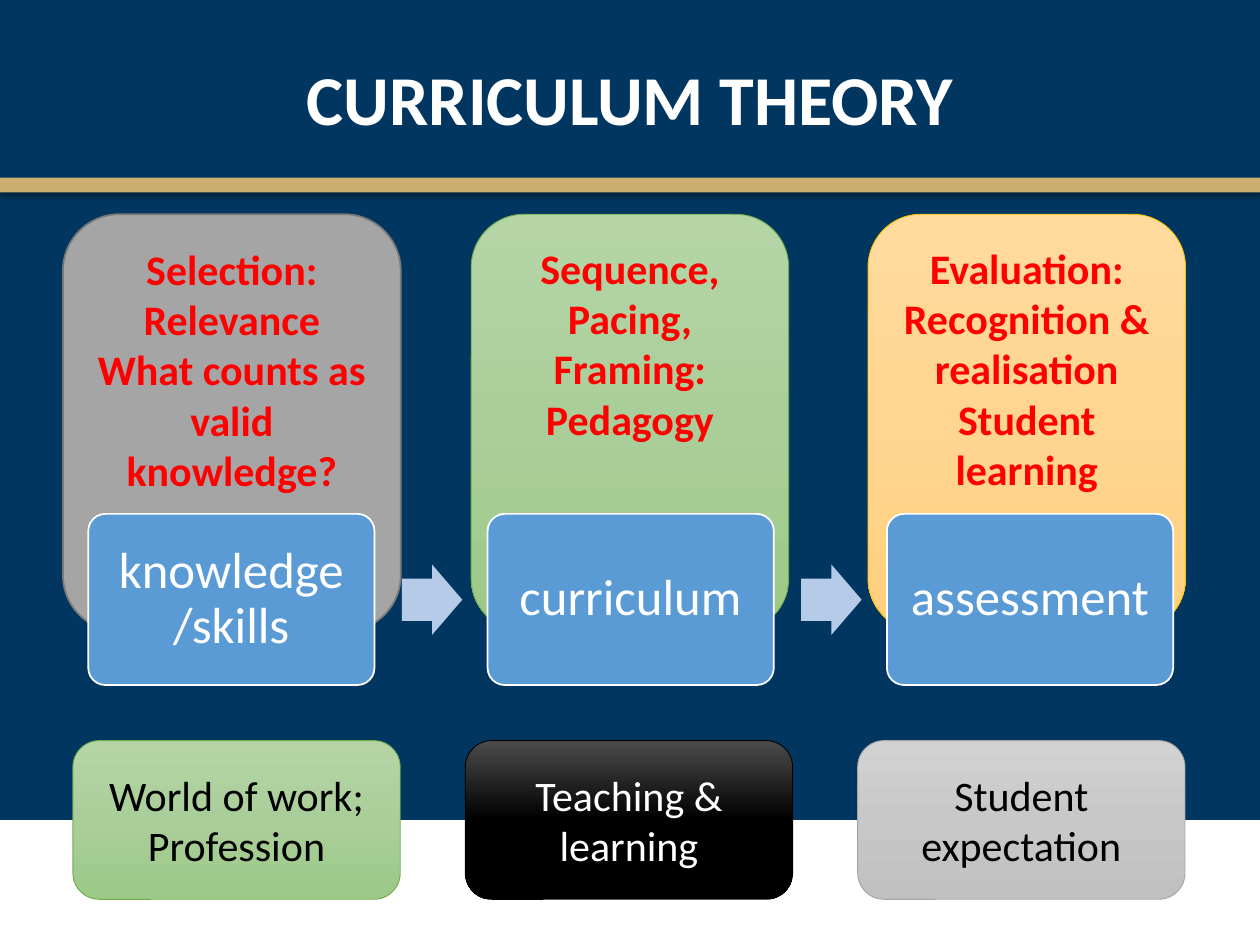
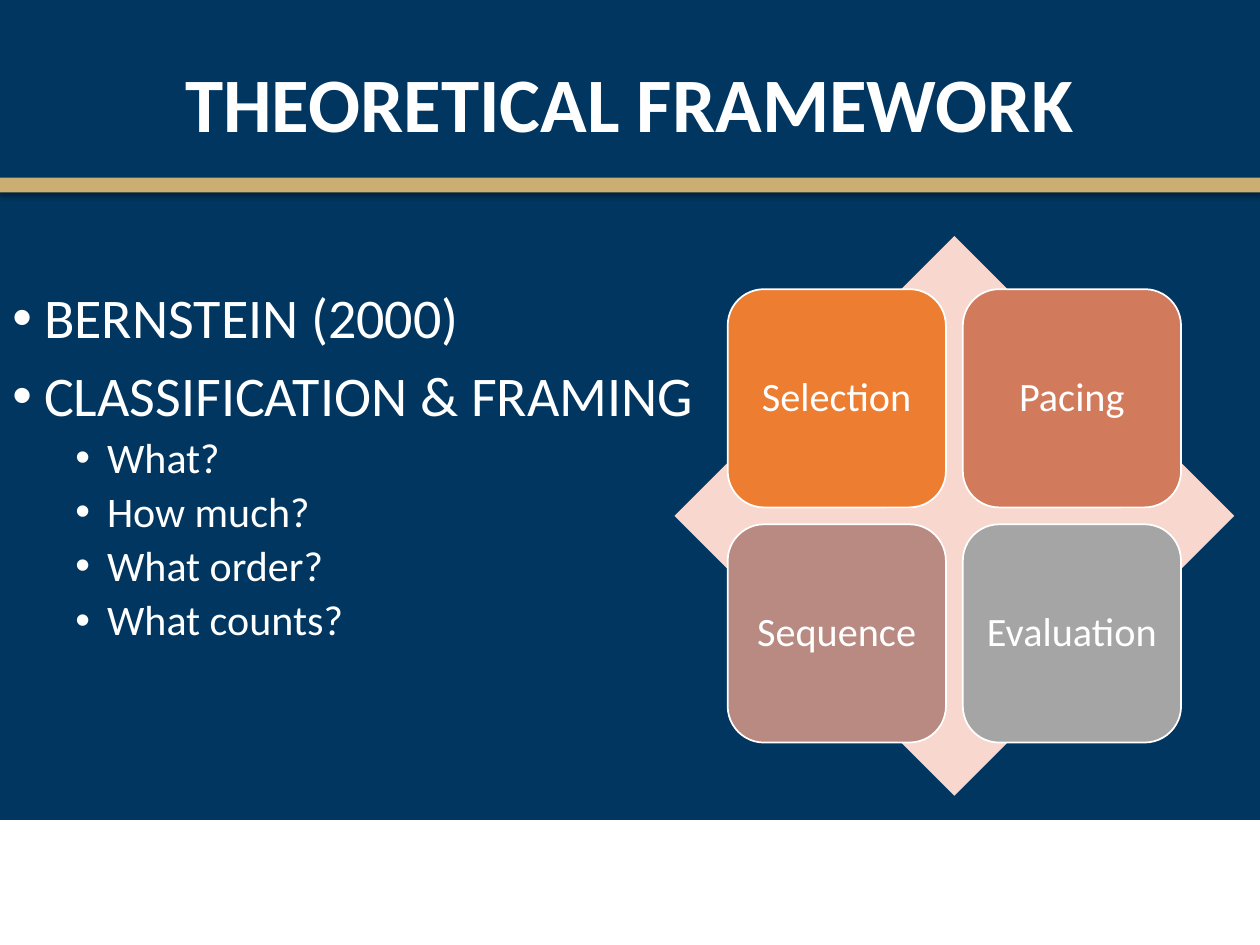
import copy
from dataclasses import dataclass

import pptx
import pptx.dml.color
import pptx.enum.shapes
import pptx.enum.text
import pptx.oxml
import pptx.oxml.ns
import pptx.util
from lxml import etree

Cm = pptx.util.Cm
Pt = pptx.util.Pt
Kind = pptx.enum.shapes.MSO_SHAPE
Anchor = pptx.enum.text.MSO_ANCHOR
Align = pptx.enum.text.PP_ALIGN


@dataclass(frozen=True)
class Theme:
    font: str = "Calibri"
    navy: str = "013660"
    gold: str = "CBAE71"
    white: str = "FFFFFF"
    black: str = "000000"
    red: str = "FF0000"
    grey: str = "A5A5A5"
    grey_edge: str = "7A7A7A"
    green_edge: str = "70AD47"
    amber_edge: str = "FFC000"
    step: str = "5B9BD5"
    arrow: str = "B5CBE7"
    diamond: str = "F8D7CE"
    green: tuple = ("B5D5A7", "AACE9A", "9CC987")
    amber: tuple = ("FFDB9E", "FFD590", "FFD07C")
    charcoal: tuple = ("4B4B4B", "000000", "000000")
    silver: tuple = ("D2D2D2", "C8C8C8", "C0C0C0")
    bullet_size: int = 32
    step_size: int = 29
    text_size: int = 24
    tile_size: int = 23


THEME = Theme()

# Title text, type size, top in cm
THEORY_TITLE = ("CURRICULUM THEORY", 40, 0.91)
FRAMEWORK_TITLE = ("THEORETICAL FRAMEWORK", 44, 1.02)

# Lines, left and width in cm, fill, edge, edge width
PANELS = [
    (["Selection:", "Relevance", "What counts as valid knowledge?"],
     1.27, 6.81, THEME.grey, THEME.grey_edge, 1),
    (["Sequence,", "Pacing,", "Framing:", "Pedagogy"],
     9.5, 6.4, THEME.green, THEME.green_edge, 0.5),
    (["Evaluation:", "Recognition & realisation", "Student learning"],
     17.5, 6.4, THEME.amber, THEME.amber_edge, 0.5),
]
STEPS = ["knowledge /skills", "curriculum", "assessment"]

# Lines, fill, edge, text colour
CONTEXTS = [
    (["World of work;", "Profession"], THEME.green, THEME.green_edge, THEME.black),
    (["Teaching & learning"], THEME.charcoal, THEME.black, THEME.white),
    (["Student expectation"], THEME.silver, THEME.grey, THEME.black),
]

# Level and text
POINTS = [
    (0, "BERNSTEIN (2000)"),
    (0, "CLASSIFICATION & FRAMING"),
    (1, "What?"),
    (1, "How much?"),
    (1, "What order?"),
    (1, "What counts?"),
]
TILES = [
    ("Selection", "ED7D31"),
    ("Pacing", "D17B5C"),
    ("Sequence", "B98A82"),
    ("Evaluation", THEME.grey),
]


def rgb(colour):
    return pptx.dml.color.RGBColor.from_string(colour)


def paint(fill, colours):
    """Fill with one colour, or top to bottom with a tuple of three."""
    if isinstance(colours, str):
        fill.solid()
        fill.fore_color.rgb = rgb(colours)
        return
    fill.gradient()
    fill.gradient_angle = 270
    first = fill.gradient_stops[0]._gs
    first.addnext(copy.deepcopy(first))
    for stop, colour, position in zip(fill.gradient_stops, colours, (0, 0.5, 1)):
        stop.color.rgb = rgb(colour)
        stop.position = position


def add_box(page, kind, place, fill, edge=None, edge_width=1, corner=None):
    """Add a preset shape; place is left, top, width, height in cm."""
    box = page.shapes.add_shape(kind, *map(Cm, place))
    box.shadow.inherit = False
    paint(box.fill, fill)
    if edge:
        box.line.color.rgb = rgb(edge)
        box.line.width = Pt(edge_width)
    else:
        box.line.fill.background()
    if corner is not None:
        box.adjustments[0] = corner
    return box


def style(para, size, colour, bold=False):
    para.font.name = THEME.font
    para.font.size = Pt(size)
    para.font.bold = bold
    para.font.color.rgb = rgb(colour)


def write(box, lines, size, colour, bold=False, spacing=None, inset=None,
          anchor=Anchor.MIDDLE):
    """Write centred lines, one paragraph each."""
    frame = box.text_frame
    frame.word_wrap = True
    frame.vertical_anchor = anchor
    if inset is not None:
        frame.margin_left = frame.margin_right = Cm(inset)
        frame.margin_top = frame.margin_bottom = Cm(inset)
    for index, line in enumerate(lines):
        para = frame.paragraphs[0] if index == 0 else frame.add_paragraph()
        para.text = line
        para.alignment = Align.CENTER
        if spacing:
            para.line_spacing = spacing
        style(para, size, colour, bold)


def add_band_shadow(band):
    effects = band._element.spPr.find(pptx.oxml.ns.qn("a:effectLst"))
    effects.append(pptx.oxml.parse_xml(
        f'<a:outerShdw {pptx.oxml.ns.nsdecls("a")} blurRad="{Pt(3.1)}" '
        f'dist="{Pt(1.8)}" dir="5400000" rotWithShape="0">'
        f'<a:srgbClr val="{THEME.black}"><a:alpha val="35000"/></a:srgbClr>'
        '</a:outerShdw>'))


def add_page(deck, title):
    """Add a page with the shared background, bands and title."""
    text, size, top = title
    page = deck.slides.add_slide(deck.slide_layouts[6])
    paint(page.background.fill, THEME.navy)
    add_box(page, Kind.RECTANGLE, (0, 16.54, 25.4, 2.51), THEME.white, THEME.white)
    add_band_shadow(
        add_box(page, Kind.RECTANGLE, (0, 3.58, 25.4, 0.3), THEME.gold))
    heading = page.shapes.add_textbox(Cm(1.75), Cm(top), Cm(21.9), Cm(2.31))
    write(heading, [text], size, THEME.white, bold=True, spacing=0.9)
    return page


def build_theory(deck):
    page = add_page(deck, THEORY_TITLE)
    for lines, left, width, fill, edge, edge_width in PANELS:
        panel = add_box(page, Kind.ROUNDED_RECTANGLE, (left, 4.32, width, 8.41),
                        fill, edge, edge_width)
        write(panel, lines, THEME.text_size, THEME.red, bold=True, inset=0.25,
              anchor=Anchor.TOP)

    step_left, step_pitch = 1.78, 8.05
    for index, label in enumerate(STEPS):
        left = step_left + index * step_pitch
        if index:
            arrow = add_box(page, Kind.RIGHT_ARROW, (left - 1.73, 11.38, 1.22, 1.42),
                            THEME.arrow, corner=0.6)
            arrow.adjustments[1] = 0.5
        step = add_box(page, Kind.ROUNDED_RECTANGLE, (left, 10.36, 5.77, 3.45),
                       THEME.step, THEME.white, corner=0.1)
        write(step, [label], THEME.step_size, THEME.white, spacing=0.9, inset=0.3)

    context_left, context_pitch = 1.47, 7.91
    for index, (lines, fill, edge, colour) in enumerate(CONTEXTS):
        place = (context_left + index * context_pitch, 14.93, 6.6, 3.2)
        card = add_box(page, Kind.ROUNDED_RECTANGLE, place, fill, edge, 0.5)
        write(card, lines, THEME.text_size, colour)


def add_points(page):
    box = page.shapes.add_textbox(Cm(0), Cm(5.72), Cm(16.48), Cm(9.19))
    frame = box.text_frame
    frame.word_wrap = True
    for index, (level, text) in enumerate(POINTS):
        para = frame.paragraphs[0] if index == 0 else frame.add_paragraph()
        para.text = text
        para.level = level
        para.line_spacing = 0.9
        para.space_before = Pt(0 if index == 0 else (10, 5)[level])
        properties = para._p.get_or_add_pPr()
        properties.set("marL", str(Cm(0.64 + 1.27 * level)))
        properties.set("indent", str(-Cm(0.64)))
        for tag, name, value in (("a:buFont", "typeface", "Arial"),
                                 ("a:buChar", "char", "•")):
            etree.SubElement(properties, pptx.oxml.ns.qn(tag)).set(name, value)
        style(para, (THEME.bullet_size, THEME.text_size)[level], THEME.white)


def build_framework(deck):
    page = add_page(deck, FRAMEWORK_TITLE)
    add_points(page)
    add_box(page, Kind.DIAMOND, (13.6, 4.76, 11.28, 11.28), THEME.diamond)
    tile_left, tile_top, tile_side, tile_pitch = 14.67, 5.83, 4.4, 4.74
    for index, (label, fill) in enumerate(TILES):
        row, column = divmod(index, 2)
        place = (tile_left + column * tile_pitch, tile_top + row * tile_pitch,
                 tile_side, tile_side)
        tile = add_box(page, Kind.ROUNDED_RECTANGLE, place, fill, THEME.white)
        write(tile, [label], THEME.tile_size, THEME.white, spacing=0.9, inset=0.25)


def main():
    deck = pptx.Presentation()
    deck.slide_width, deck.slide_height = Cm(25.4), Cm(19.05)
    build_theory(deck)
    build_framework(deck)
    deck.save("out.pptx")


if __name__ == "__main__":
    main()
